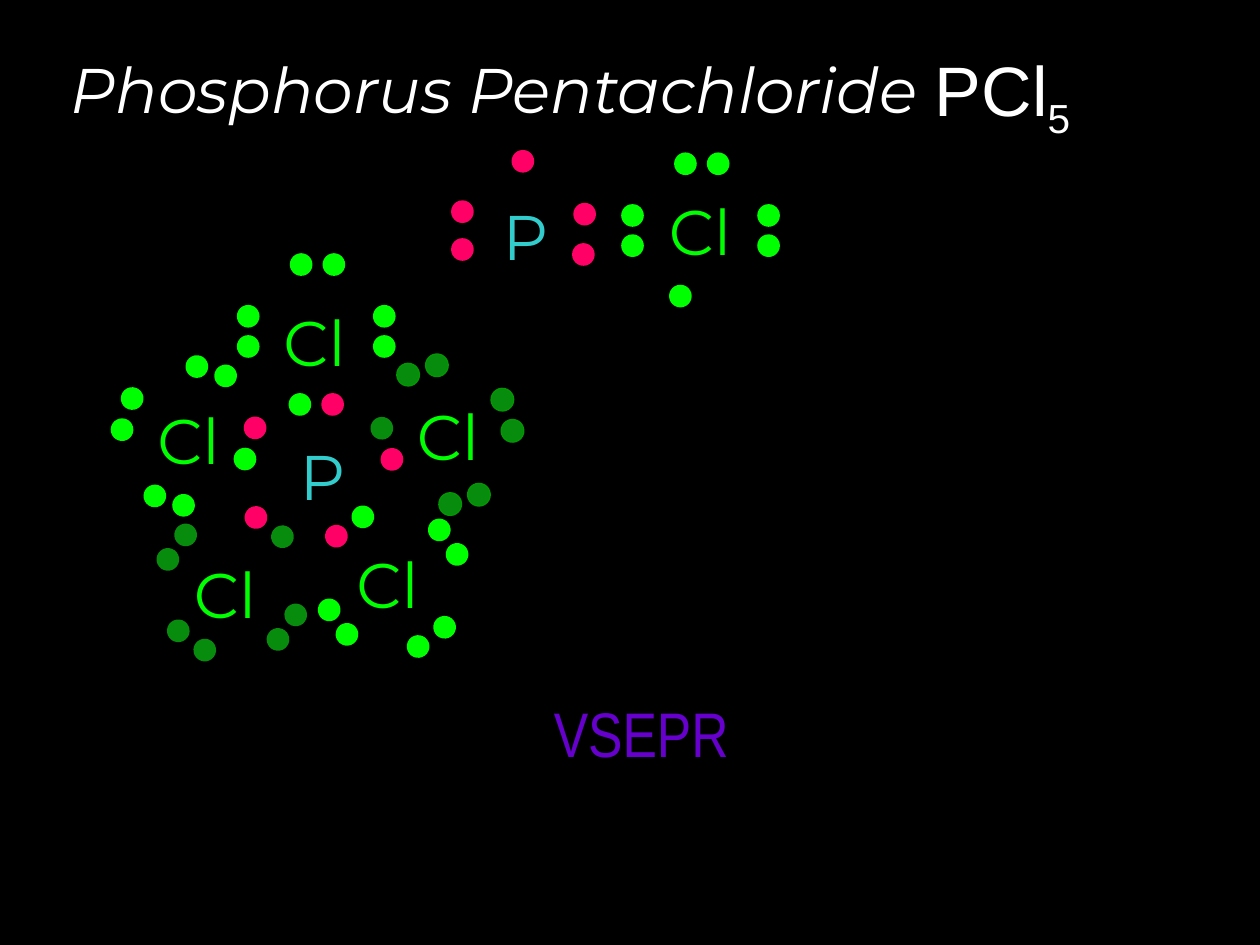
from math import cos, radians, sin

from pptx import Presentation
from pptx.dml.color import RGBColor
from pptx.enum.shapes import MSO_SHAPE
from pptx.enum.text import PP_ALIGN
from pptx.util import Inches, Pt

COLORS = {
    "back": "000000",
    "white": "FFFFFF",
    "green": "00FF00",
    "dark": "088C0E",
    "edge": "009900",
    "pink": "FF0066",
    "teal": "33CCCC",
    "violet": "6600CC",
}
DOT = 0.18
# Lone pairs around a chlorine, as offsets from the middle of the atom
PAIRS = [(x, y) for x in (-0.54, 0.54) for y in (-0.12, 0.12)]
PAIRS += [(-0.12, -0.53), (0.14, -0.53)]


def color(name):
    return RGBColor.from_string(COLORS[name])


def spin(x, y, turn):
    angle = radians(turn)
    return x * cos(angle) - y * sin(angle), x * sin(angle) + y * cos(angle)


class Deck:
    def __init__(self):
        self.show = Presentation()
        self.show.slide_width = Inches(10)
        self.show.slide_height = Inches(7.5)
        self.slide = self.show.slides.add_slide(self.show.slide_layouts[6])
        fill = self.slide.background.fill
        fill.solid()
        fill.fore_color.rgb = color("back")

    def text(self, words, box, *, ink, font="Montserrat", size=36, italic=False,
             align=PP_ALIGN.CENTER, before=0, sub=""):
        frame = self.slide.shapes.add_textbox(*map(Inches, box)).text_frame
        frame.word_wrap = True
        frame.margin_left = frame.margin_right = 0
        line = frame.paragraphs[0]
        line.alignment = align
        line.space_before = Pt(before)
        for part in filter(None, (words, sub)):
            run = line.add_run()
            run.text = part
            run.font.name = font
            run.font.size = Pt(size)
            run.font.italic = italic
            run.font.color.rgb = color(ink)
        if sub:
            run.font._element.set("baseline", "-25000")

    def dot(self, x, y, ink, turn=0, edge=None):
        """Draw an electron centred on x, y."""
        shape = self.slide.shapes.add_shape(
            MSO_SHAPE.OVAL, Inches(x - DOT / 2), Inches(y - DOT / 2),
            Inches(DOT), Inches(DOT))
        shape.shadow.inherit = False
        shape.rotation = turn
        shape.fill.solid()
        shape.fill.fore_color.rgb = color(ink)
        if edge:
            shape.line.color.rgb = color(edge)
            shape.line.width = Pt(0.75)
        else:
            shape.line.fill.background()

    def atom(self, mid, label, ink="green", turn=0, edge=None, bond=None):
        """Draw a chlorine; bond is the middle of its shared pair before the turn."""
        def place(x, y, tone, rim=None):
            dx, dy = spin(x, y, turn)
            self.dot(mid[0] + dx, mid[1] + dy, tone, turn, rim)

        for x, y in PAIRS:
            place(x, y, ink, edge)
        if bond:
            x, y = bond
            place(x - 0.13, y, ink)
            place(x + 0.13, y, "pink")
        self.text("Cl", (*label, 0.59, 0.63), ink="green")

    def save(self):
        self.show.save("out.pptx")


def main():
    deck = Deck()
    deck.text("Phosphorus Pentachloride", (0.52, 0.35, 6.8, 0.7),
              ink="white", italic=True)
    deck.text("PCl", (7.42, 0.32, 1.91, 0.77), ink="white", font="Arial", size=40,
              align=PP_ALIGN.LEFT, before=4, sub="5")

    # Separate atoms
    for left, top in ((3.89, 1.52), (2.28, 3.42)):
        deck.text("P", (left, top, 0.56, 0.71), ink="teal")
    for x, y in ((3.67, 1.68), (3.67, 1.98), (4.15, 1.28), (4.64, 1.7), (4.63, 2.02)):
        deck.dot(x, y, "pink")
    deck.atom((5.56, 1.83), (5.26, 1.48))
    deck.dot(5.4, 2.35, "green")

    # Molecule: five chlorines, each a fifth of a turn further round
    ring = [
        dict(mid=(2.51, 2.63), label=(2.2, 2.36), bond=(0, 0.58)),
        dict(mid=(3.52, 3.45), label=(3.26, 3.11), bond=(-0.07, 0.45),
             ink="dark", edge="edge"),
        dict(mid=(3.12, 4.62), label=(2.78, 4.28), bond=(0.02, 0.56)),
        dict(mid=(1.84, 4.66), label=(1.49, 4.36), bond=(0.04, 0.56), ink="dark"),
        dict(mid=(1.51, 3.46), label=(1.2, 3.14), bond=(0.09, 0.47)),
    ]
    for step, look in enumerate(ring):
        deck.atom(turn=72 * step, **look)

    deck.text("VSEPR", (3.55, 5.46, 3.08, 0.95), ink="violet", font="Arial Narrow")
    deck.save()


if __name__ == "__main__":
    main()
